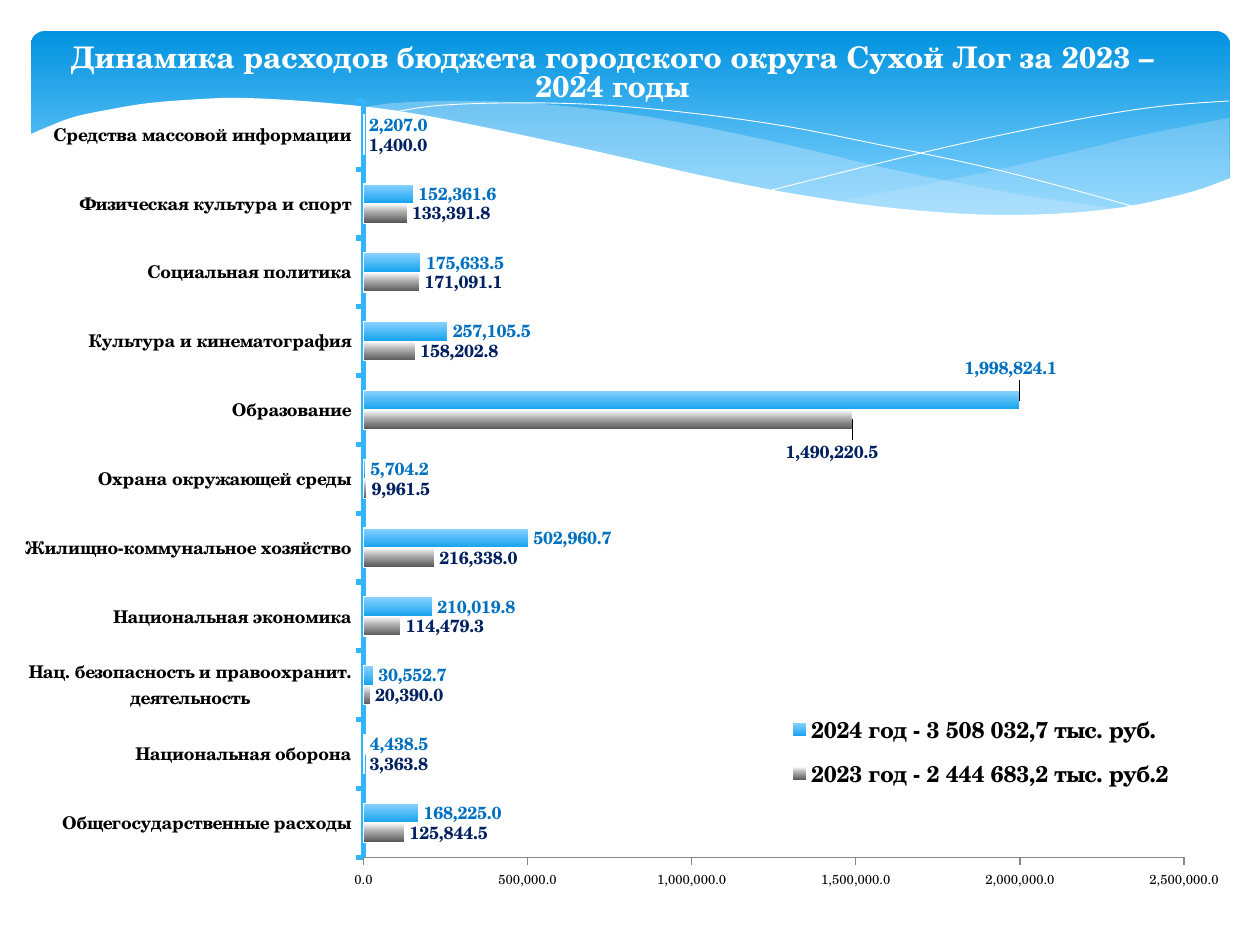
import dataclasses

import lxml.etree
import pptx
import pptx.chart.data
import pptx.dml.color
import pptx.enum.chart
import pptx.enum.shapes
import pptx.enum.text
import pptx.oxml
import pptx.oxml.ns
import pptx.util


@dataclasses.dataclass(frozen=True)
class Theme:
    """Colours, fonts and type sizes of the slide."""
    font: str = "TeX Gyre Schola"
    chart_font: str = "Calibri"
    white: str = "FFFFFF"
    black: str = "000000"
    mist: str = "C6E7FC"
    axis: str = "31B6FD"
    scale_line: str = "878787"
    banner: tuple = ((0, "0293E0"), (90, "83D3FE"))
    title_size: float = 17
    label_size: float = 10
    scale_size: float = 7.5
    legend_size: float = 13


THEME = Theme()
TITLE = "Динамика расходов бюджета городского округа Сухой Лог за 2023 – 2024 годы"
EDUCATION = 6
EXPENSES = (
    ("Общегосударственные расходы", 125844.5, 168225.0),
    ("Национальная оборона", 3363.8, 4438.5),
    ("Нац. безопасность и правоохранит. деятельность", 20390.0, 30552.7),
    ("Национальная экономика", 114479.3, 210019.8),
    ("Жилищно-коммунальное хозяйство", 216338.0, 502960.7),
    ("Охрана окружающей среды", 9961.5, 5704.2),
    ("Образование", 1490220.5, 1998824.1),
    ("Культура и кинематография", 158202.8, 257105.5),
    ("Социальная политика", 171091.1, 175633.5),
    ("Физическая культура и спорт", 133391.8, 152361.6),
    ("Средства массовой информации", 1400.0, 2207.0),
)
YEARS = (
    ("2023 год - 2 444 683,2 тыс. руб.2", "002060",
     ((0, "FFFFFF"), (44, "ABABAB"), (100, "545454")), (-0.06, 0.04)),
    ("2024 год - 3 508 032,7 тыс. руб.", "0070C0",
     ((0, "8CD3FF"), (100, "14A2EF")), (-0.05, -0.04)),
)
NUMBER_FORMAT = "#,##0.0"
RIGHT_TIP_EDGES = (
    ((1229, 118), (1142, 135), (1085, 149), (982, 173), (833, 202)),
    ((833, 202), (922, 211), (1012, 217), (1102, 214), (1178, 197), (1229, 179)),
)
BAND_EDGES = (
    ((1125, 210), (1017, 194), (890, 169), (793, 146), (699, 126), (616, 112),
     (529, 103), (455, 101), (394, 103), (360, 108)),
    ((360, 108), (431, 118), (538, 139), (668, 170), (779, 193), (893, 209),
     (989, 217), (1068, 217), (1125, 210)),
)
FALLING_LINE = ((389, 113), (445, 105), (545, 103), (642, 108), (766, 123),
                (876, 144), (1002, 171), (1143, 209))
RISING_LINE = ((772, 190), (876, 164), (978, 140), (1091, 117), (1164, 106), (1229, 101))
PANEL_EDGES = (
    ((1231, 178), (1184, 194), (1103, 210), (999, 215), (892, 208), (789, 193),
     (699, 175), (599, 152), (493, 129), (398, 111), (315, 102), (243, 98),
     (203, 99), (150, 103), (107, 110), (74, 117), (50, 126), (29, 135)),
    ((29, 282), (1231, 282)),
)


def px(length):
    """Turn pixels into EMU."""
    return pptx.util.Emu(round(length * 914400 / 126))


def rgb(code):
    """Make a colour from its hexadecimal code."""
    return pptx.dml.color.RGBColor.from_string(code)


def format_font(font, size, color=THEME.black, bold=True, name=THEME.font):
    """Set the face, size, weight and colour of a font."""
    font.name, font.size, font.bold = name, pptx.util.Pt(size), bold
    font.color.rgb = rgb(color)


def add_xml(parent, tag, **attributes):
    """Append a namespaced child element."""
    return lxml.etree.SubElement(parent, pptx.oxml.ns.qn(tag), attributes)


def fill_gradient(fill, element, stops):
    """Fill an element with a gradient from top to bottom."""
    fill.gradient()
    fill.gradient_angle = 270
    stop_list = element.xpath(".//a:gsLst")[0]
    for child in list(stop_list):
        stop_list.remove(child)
    for position, color in stops:
        stop = add_xml(stop_list, "a:gs", pos=str(position * 1000))
        add_xml(stop, "a:srgbClr", val=color)


def make_layout(**fractions):
    """Make a manual chart layout from fractions of the chart."""
    namespace = pptx.oxml.ns.nsdecls("c")
    layout = pptx.oxml.parse_xml(f"<c:layout {namespace}><c:manualLayout/></c:layout>")
    for name, value in fractions.items():
        add_xml(layout[0], f"c:{name}", val=str(value))
    return layout


def smooth(points, steps=6):
    """Sample a Catmull-Rom curve through the points."""
    padded = (points[0], *points, points[-1])
    samples = []
    for a, b, c, d in zip(padded, padded[1:], padded[2:], padded[3:]):
        for step in range(steps):
            t = step / steps
            samples.append(tuple(
                (2 * q + (r - p) * t + (2 * p - 5 * q + 4 * r - s) * t ** 2
                 + (3 * q - p - 3 * r + s) * t ** 3) / 2
                for p, q, r, s in zip(a, b, c, d)))
    return samples + [points[-1]]


def add_wave(slide, edges, color=None, opacity=100):
    """Draw smooth edges as a filled wave, or as a white line without a colour."""
    points = [(px(x), px(y)) for edge in edges for x, y in smooth(edge)]
    builder = slide.shapes.build_freeform(*points[0], scale=1.0)
    builder.add_line_segments(points[1:], close=color is not None)
    shape = builder.convert_to_shape()
    shape.shadow.inherit = False
    if color is None:
        shape.fill.background()
        shape.line.color.rgb = rgb(THEME.white)
        shape.line.width = pptx.util.Pt(0.5)
        return
    shape.fill.solid()
    shape.fill.fore_color.rgb = rgb(color)
    shape.line.fill.background()
    add_xml(shape._element.xpath(".//a:srgbClr")[0], "a:alpha", val=str(opacity * 1000))


def add_banner(slide):
    """Draw the rounded gradient banner."""
    shape = slide.shapes.add_shape(pptx.enum.shapes.MSO_SHAPE.ROUNDED_RECTANGLE,
                                   px(31), px(31), px(1199), px(197))
    shape.adjustments[0] = 0.07
    shape.shadow.inherit = False
    shape.line.fill.background()
    fill_gradient(shape.fill, shape._element, THEME.banner)


def add_text(slide, text, left, top, width, height, spacing=1.0, **font_format):
    """Add a centred, wrapping text box."""
    frame = slide.shapes.add_textbox(px(left), px(top), px(width), px(height)).text_frame
    frame.word_wrap = True
    frame.margin_top = frame.margin_bottom = 0
    paragraph = frame.paragraphs[0]
    paragraph.alignment = pptx.enum.text.PP_ALIGN.CENTER
    paragraph.line_spacing = spacing
    run = paragraph.add_run()
    run.text = text
    format_font(run.font, **font_format)


def format_axes(chart):
    """Style the category and value axes."""
    for axis, color, width in ((chart.category_axis, THEME.axis, 3),
                               (chart.value_axis, THEME.scale_line, 0.75)):
        axis.has_major_gridlines = False
        axis.major_tick_mark = pptx.enum.chart.XL_TICK_MARK.OUTSIDE
        axis.format.line.color.rgb = rgb(color)
        axis.format.line.width = pptx.util.Pt(width)
    format_font(chart.category_axis.tick_labels.font, THEME.label_size)
    scale = chart.value_axis
    scale.minimum_scale, scale.maximum_scale, scale.major_unit = 0, 2500000, 500000
    scale.tick_labels.number_format = NUMBER_FORMAT
    scale.tick_labels.number_format_is_linked = False
    format_font(scale.tick_labels.font, THEME.scale_size, bold=False)


def format_series(series, label_color, stops, offset):
    """Style the bars and labels of a year and shift its education label."""
    fill_gradient(series.format.fill, series._element, stops)
    series.format.line.color.rgb = rgb(THEME.white)
    series.format.line.width = pptx.util.Pt(0.75)
    labels = series.data_labels
    labels.show_value = True
    labels.number_format, labels.number_format_is_linked = NUMBER_FORMAT, False
    education_label = series.points[EDUCATION].data_label
    for label in (labels, education_label):
        label.position = pptx.enum.chart.XL_LABEL_POSITION.OUTSIDE_END
        format_font(label.font, THEME.label_size, label_color)
    index = series._element.xpath(".//c:dLbl/c:idx")[0]
    index.addnext(make_layout(x=offset[0], y=offset[1]))


def add_expense_chart(slide):
    """Add the bar chart of expenses by year."""
    names, *columns = zip(*EXPENSES)
    data = pptx.chart.data.CategoryChartData(number_format=NUMBER_FORMAT)
    data.categories = names
    for (year, *_), values in zip(YEARS, columns):
        data.add_series(year, values)
    chart = slide.shapes.add_chart(pptx.enum.chart.XL_CHART_TYPE.BAR_CLUSTERED,
                                   px(25), px(76), px(1201), px(814), data).chart
    chart.has_title = False
    format_font(chart.font, THEME.label_size, bold=False, name=THEME.chart_font)
    plot = chart.plots[0]
    plot.gap_width, plot.overlap, plot.vary_by_categories = 150, 0, False
    for series, (_, *style) in zip(plot.series, YEARS):
        format_series(series, *style)
    format_axes(chart)
    chart.has_legend = True
    legend = chart.legend
    legend.position = pptx.enum.chart.XL_LEGEND_POSITION.TOP
    legend.include_in_layout = False
    format_font(legend.font, THEME.legend_size)
    legend._element.xpath("c:legendPos")[0].addnext(
        make_layout(xMode="edge", yMode="edge", x=0.62, y=0.77, w=0.35, h=0.12))
    plot_area = chart._chartSpace.xpath(".//c:plotArea")[0]
    for layout in plot_area.xpath("c:layout"):
        plot_area.remove(layout)
    plot_area.insert(0, make_layout(layoutTarget="inner", xMode="edge", yMode="edge",
                                    x=0.28, y=0.03, w=0.685, h=0.93))


def main():
    """Build the slide and save it."""
    presentation = pptx.Presentation()
    presentation.slide_width, presentation.slide_height = px(1260), px(945)
    slide = presentation.slides.add_slide(presentation.slide_layouts[6])
    add_banner(slide)
    add_wave(slide, RIGHT_TIP_EDGES, THEME.mist, 29)
    add_wave(slide, BAND_EDGES, THEME.mist, 40)
    for line in (FALLING_LINE, RISING_LINE):
        add_wave(slide, (line,))
    add_wave(slide, PANEL_EDGES, THEME.white)
    add_text(slide, TITLE, 39, 46, 1147, 63, spacing=0.8,
             size=THEME.title_size, color=THEME.white)
    add_expense_chart(slide)


    presentation.save("out.pptx")


if __name__ == "__main__":
    main()
